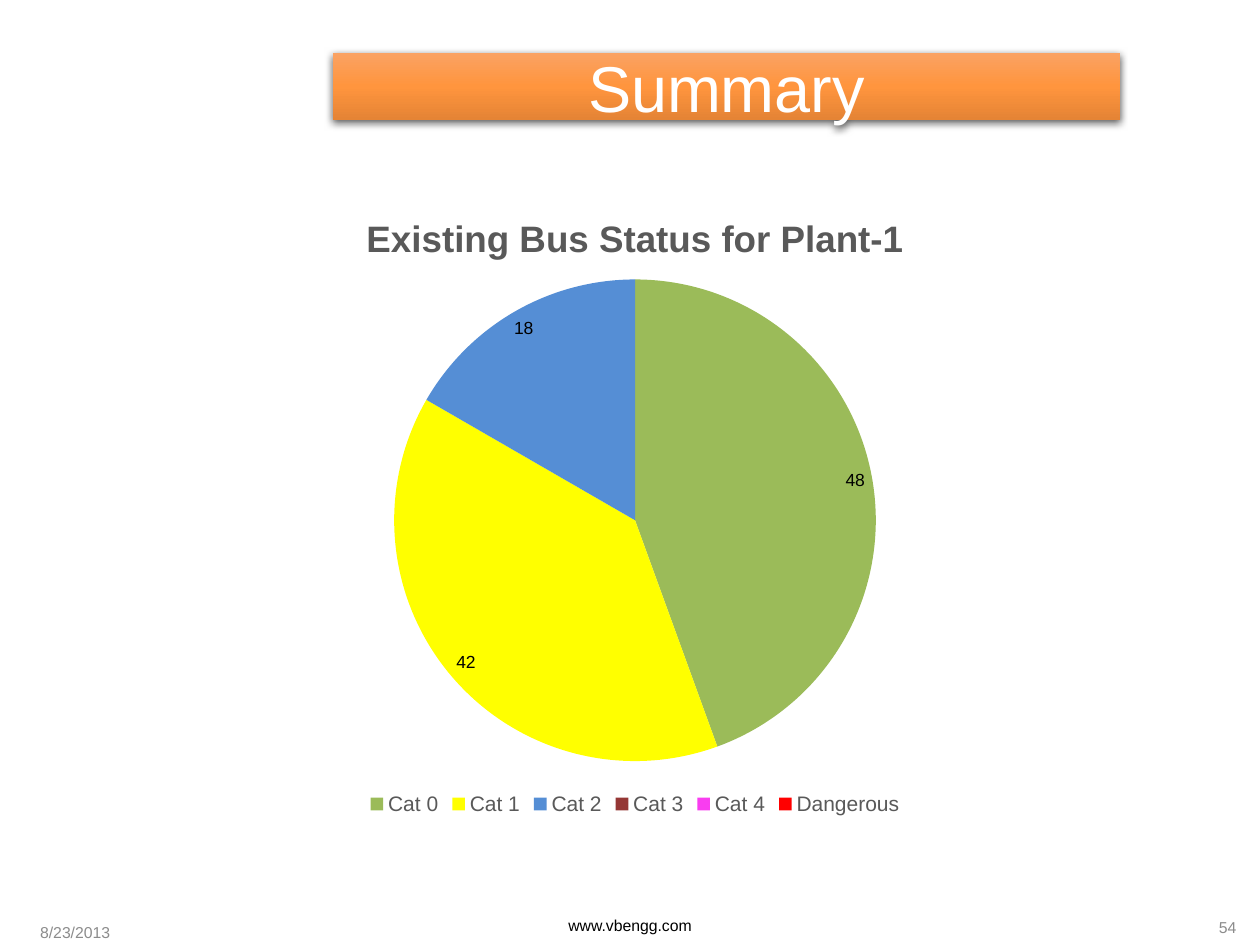
from dataclasses import dataclass

from lxml.etree import SubElement
from pptx import Presentation
from pptx.chart.data import CategoryChartData
from pptx.dml.color import RGBColor
from pptx.enum.chart import XL_CHART_TYPE, XL_LABEL_POSITION, XL_LEGEND_POSITION
from pptx.enum.shapes import MSO_SHAPE
from pptx.enum.text import MSO_ANCHOR, PP_ALIGN
from pptx.oxml import parse_xml
from pptx.oxml.ns import nsdecls, qn
from pptx.util import Inches, Pt


@dataclass(frozen=True)
class Theme:
    font: str = "Arial"
    white: str = "FFFFFF"
    black: str = "000000"
    muted: str = "8C8C8C"
    chart_text: str = "595959"
    banner: tuple = ((0, "FAA263"), (50, "FF953E"), (100, "E58435"))
    banner_size: int = 37
    footer_size: int = 9
    chart_title_size: int = 21
    legend_size: int = 12
    label_size: int = 10


THEME = Theme()
CATEGORIES = (
    ("Cat 0", 48, "9BBB59"),
    ("Cat 1", 42, "FFFF00"),
    ("Cat 2", 18, "558ED5"),
    ("Cat 3", 0, "953735"),
    ("Cat 4", 0, "F93DF0"),
    ("Dangerous", 0, "FF0000"),
)


def style_font(font, size, color, bold=False):
    font.name = THEME.font
    font.size = Pt(size)
    font.bold = bold
    font.color.rgb = RGBColor.from_string(color)


def write_text(shape, text, size, color, alignment):
    frame = shape.text_frame
    frame.word_wrap = True
    frame.vertical_anchor = MSO_ANCHOR.MIDDLE
    frame.text = text
    paragraph = frame.paragraphs[0]
    paragraph.alignment = alignment
    style_font(paragraph.runs[0].font, size, color)


def add_footer(slide, text, left, top, width, color, alignment):
    box = slide.shapes.add_textbox(Inches(left), Inches(top), Inches(width), Inches(0.4))
    write_text(box, text, THEME.footer_size, color, alignment)


def add_banner(slide, text):
    banner = slide.shapes.add_shape(
        MSO_SHAPE.RECTANGLE, Inches(2.64), Inches(0.42), Inches(6.25), Inches(0.53)
    )
    banner.line.fill.background()
    stops = "".join(
        f'<a:gs pos="{position * 1000}"><a:srgbClr val="{color}"/></a:gs>'
        for position, color in THEME.banner
    )
    gradient = parse_xml(
        f'<a:gradFill {nsdecls("a")} rotWithShape="1"><a:gsLst>{stops}</a:gsLst>'
        '<a:lin ang="5400000" scaled="0"/></a:gradFill>'
    )
    shadow = parse_xml(
        f'<a:effectLst {nsdecls("a")}><a:outerShdw blurRad="{Pt(4.5)}" dist="{Pt(1.5)}" '
        f'dir="5400000" rotWithShape="0"><a:srgbClr val="{THEME.black}">'
        '<a:alpha val="63000"/></a:srgbClr></a:outerShdw></a:effectLst>'
    )
    properties = banner.element.spPr
    properties.find(qn("a:prstGeom")).addnext(gradient)
    properties.find(qn("a:ln")).addnext(shadow)
    write_text(banner, text, THEME.banner_size, THEME.white, PP_ALIGN.CENTER)


def place_plot(chart, **fractions):
    plot_area = chart.element.find(".//" + qn("c:plotArea"))
    layout = plot_area.find(qn("c:layout"))
    if layout is None:
        layout = SubElement(plot_area, qn("c:layout"))
        plot_area.insert(0, layout)
    manual = SubElement(layout, qn("c:manualLayout"))
    settings = {"layoutTarget": "inner", "xMode": "edge", "yMode": "edge", **fractions}
    for name, value in settings.items():
        SubElement(manual, qn(f"c:{name}")).set("val", str(value))


def add_status_chart(slide, title):
    names, values, colors = zip(*CATEGORIES)
    data = CategoryChartData()
    data.categories = names
    data.add_series("Series 1", values)
    chart = slide.shapes.add_chart(
        XL_CHART_TYPE.PIE, Inches(1.5), Inches(1.5), Inches(7.08), Inches(5.01), data
    ).chart
    style_font(chart.font, THEME.label_size, THEME.black)

    chart.has_title = True
    chart.chart_title.text_frame.text = title
    title_run = chart.chart_title.text_frame.paragraphs[0].runs[0]
    style_font(title_run.font, THEME.chart_title_size, THEME.chart_text, bold=True)
    chart.chart_title.include_in_layout = False

    chart.has_legend = True
    chart.legend.position = XL_LEGEND_POSITION.BOTTOM
    chart.legend.include_in_layout = False
    style_font(chart.legend.font, THEME.legend_size, THEME.chart_text)

    plot = chart.plots[0]
    plot.vary_by_categories = True
    for index, color in enumerate(colors):
        fill = plot.series[0].points[index].format.fill
        fill.solid()
        fill.fore_color.rgb = RGBColor.from_string(color)

    labels = plot.series[0].data_labels
    labels.show_value = True
    labels.number_format = "0;;;"
    labels.number_format_is_linked = False
    labels.position = XL_LABEL_POSITION.BEST_FIT
    style_font(labels.font, THEME.label_size, THEME.black)
    place_plot(chart, x=0.23, y=0.14, w=0.54, h=0.77)


def main():
    presentation = Presentation()
    presentation.slide_width = Inches(10)
    presentation.slide_height = Inches(7.5)
    slide = presentation.slides.add_slide(presentation.slide_layouts[6])
    add_footer(slide, "54", 7.66, 7.16, 2.25, THEME.muted, PP_ALIGN.RIGHT)
    add_banner(slide, "Summary")
    add_footer(slide, "8/23/2013", 0.22, 7.2, 2.25, THEME.muted, PP_ALIGN.LEFT)
    add_footer(slide, "www.vbengg.com", 3.31, 7.14, 3.38, THEME.black, PP_ALIGN.CENTER)
    add_status_chart(slide, "Existing Bus Status for Plant-1")
    presentation.save("out.pptx")


if __name__ == "__main__":
    main()
